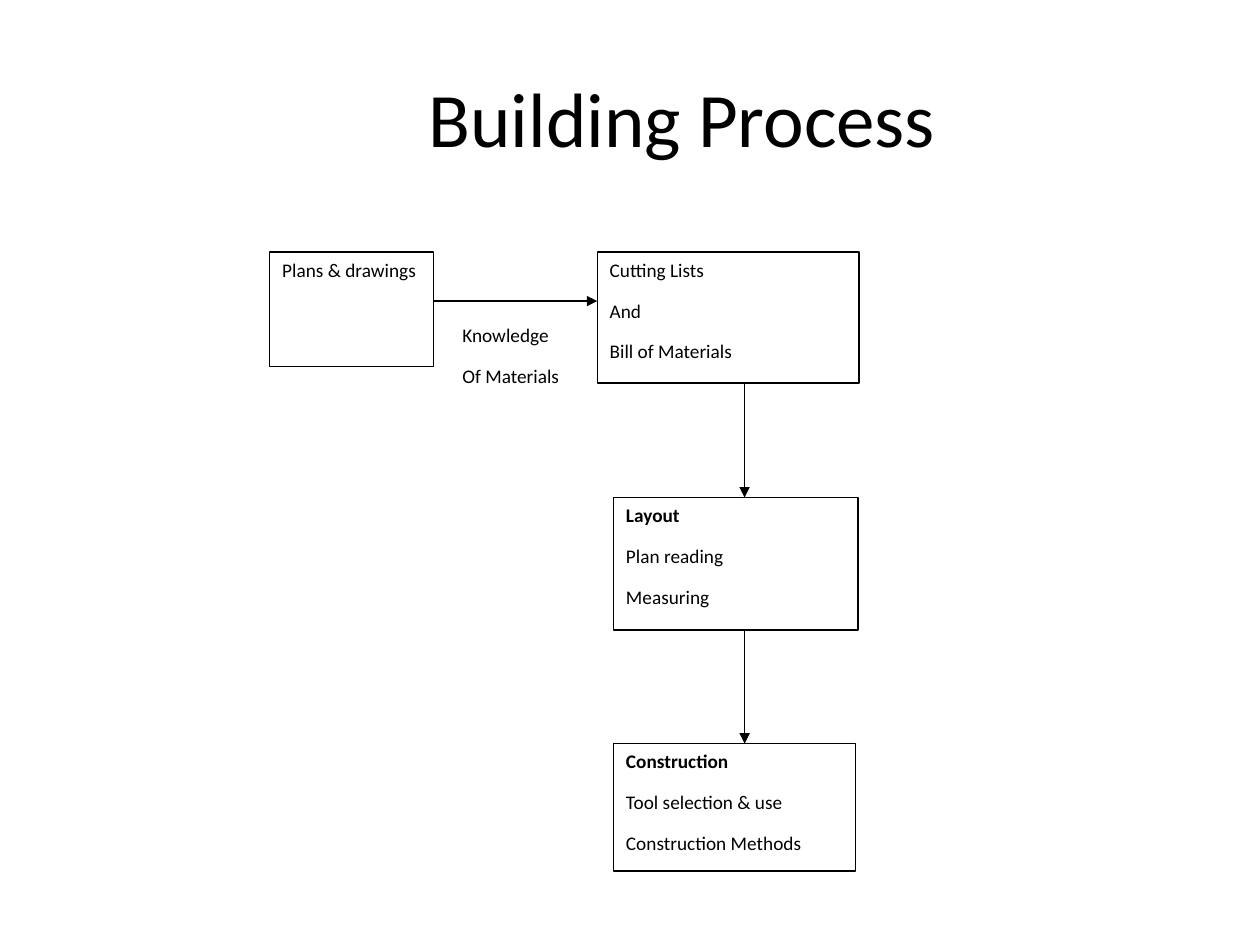
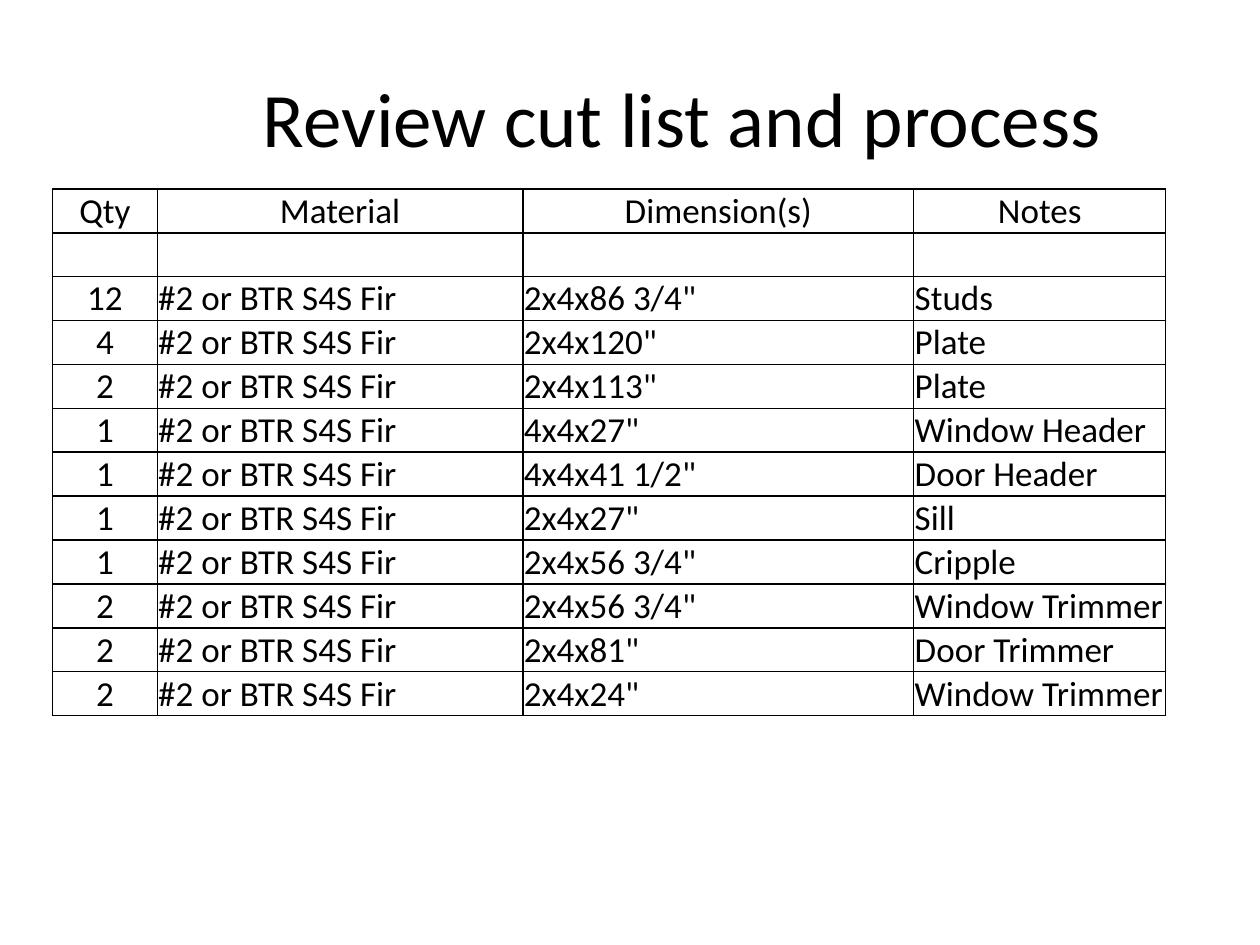
import pptx
import pptx.dml.color
import pptx.enum.shapes
import pptx.enum.text
import pptx.oxml
import pptx.oxml.ns
import pptx.util

Cm = pptx.util.Cm
Pt = pptx.util.Pt
ALIGN = pptx.enum.text.PP_ALIGN
ANCHOR = pptx.enum.text.MSO_ANCHOR

FONT = "Calibri"
INK = "000000"
PAPER = "FFFFFF"
LINE_WIDTH = Pt(0.75)
TITLE_BOX = (3.38, 0.76, 20.75, 3.18)
TITLE_ONLY_LAYOUT = 5

FLOW_BOX = (5.44, 5.08)
CUT_LIST_BOX = (1.06, 3.81)
COLUMN_WIDTHS = (2.11, 7.37, 7.88, 5.08)
ROW_HEIGHT = 0.88
CELL_MARGIN = 0.02
BORDER_SIDES = ("lnL", "lnR", "lnT", "lnB")

HEADINGS = ("Qty", "Material", "Dimension(s)", "Notes")
MATERIAL = "#2 or BTR S4S Fir"
PIECES = (
    ("12", '2x4x86 3/4"', "Studs"),
    ("4", '2x4x120"', "Plate"),
    ("2", '2x4x113"', "Plate"),
    ("1", '4x4x27"', "Window Header"),
    ("1", '4x4x41 1/2"', "Door Header"),
    ("1", '2x4x27"', "Sill"),
    ("1", '2x4x56 3/4"', "Cripple"),
    ("2", '2x4x56 3/4"', "Window Trimmer"),
    ("2", '2x4x81"', "Door Trimmer"),
    ("2", '2x4x24"', "Window Trimmer"),
)


def color(hex_text):
    """Turn a hex string into a colour."""
    return pptx.dml.color.RGBColor.from_string(hex_text)


def paint(fill, hex_text):
    """Make a fill solid in one colour."""
    fill.solid()
    fill.fore_color.rgb = color(hex_text)


def draw_line(line):
    """Give an outline or connector the shared stroke."""
    line.color.rgb = color(INK)
    line.width = LINE_WIDTH


def add_text(paragraph, text, size, bold=False):
    """Add one formatted run to a paragraph."""
    run = paragraph.add_run()
    run.text = text
    run.font.name = FONT
    run.font.size = Pt(size)
    run.font.bold = bold
    run.font.color.rgb = color(INK)


def add_titled_slide(presentation, title_text):
    """Add a slide with the shared title style."""
    layout = presentation.slide_layouts[TITLE_ONLY_LAYOUT]
    slide = presentation.slides.add_slide(layout)
    title = slide.shapes.title
    title.left, title.top, title.width, title.height = map(Cm, TITLE_BOX)
    title.text_frame.vertical_anchor = ANCHOR.MIDDLE
    paragraph = title.text_frame.paragraphs[0]
    paragraph.alignment = ALIGN.CENTER
    add_text(paragraph, title_text, 44)
    return slide


def add_step(slide, left, top, width, height, lines, heading=False, outlined=True):
    """Add a white box with one paragraph for each line."""
    shape = slide.shapes.add_shape(
        pptx.enum.shapes.MSO_SHAPE.RECTANGLE, Cm(left), Cm(top), Cm(width), Cm(height))
    shape.shadow.inherit = False
    paint(shape.fill, PAPER)
    if outlined:
        draw_line(shape.line)
    else:
        shape.line.fill.background()
    frame = shape.text_frame
    frame.word_wrap = True
    frame.vertical_anchor = ANCHOR.TOP
    for index, text in enumerate(lines):
        paragraph = frame.add_paragraph() if index else frame.paragraphs[0]
        paragraph.alignment = ALIGN.LEFT
        paragraph.space_after = Pt(10)
        add_text(paragraph, text, 11, bold=heading and index == 0)


def add_arrow(slide, start, end):
    """Add a straight arrow between two points."""
    connector = slide.shapes.add_connector(
        pptx.enum.shapes.MSO_CONNECTOR.STRAIGHT, *map(Cm, start + end))
    draw_line(connector.line)
    properties = connector.element.spPr
    outline = properties.find(pptx.oxml.ns.qn("a:ln"))
    outline.append(pptx.oxml.parse_xml(
        f'<a:tailEnd {pptx.oxml.ns.nsdecls("a")} type="triangle"/>'))
    properties.append(pptx.oxml.parse_xml(
        f'<a:effectLst {pptx.oxml.ns.nsdecls("a")}/>'))


def add_building_flow(slide, left, top):
    """Place the steps from plans to construction."""
    steps_left = left + 6.93
    arrow_x = left + 9.57
    layout_top = top + 4.95
    construction_top = top + 9.91
    add_step(slide, left, top, 3.3, 2.31, ["Plans & drawings"])
    add_step(slide, left + 6.6, top, 5.28, 2.64,
             ["Cutting Lists", "And", "Bill of Materials"])
    add_step(slide, left + 3.63, top + 1.32, 2.64, 1.65,
             ["Knowledge", "Of Materials"], outlined=False)
    add_step(slide, steps_left, layout_top, 4.93, 2.67,
             ["Layout", "Plan reading", "Measuring"], heading=True)
    add_step(slide, steps_left, construction_top, 4.88, 2.57,
             ["Construction", "Tool selection & use", "Construction Methods"], heading=True)
    add_arrow(slide, (left + 3.3, top + 0.99), (left + 6.6, top + 0.99))
    for step_top in (layout_top, construction_top):
        add_arrow(slide, (arrow_x, step_top - 2.31), (arrow_x, step_top))


def format_cell(cell):
    """Give a cell its fill, margins and borders."""
    paint(cell.fill, PAPER)
    cell.vertical_anchor = ANCHOR.MIDDLE
    cell.margin_left = cell.margin_right = cell.margin_top = Cm(CELL_MARGIN)
    cell.margin_bottom = Cm(0)
    properties = cell._tc.get_or_add_tcPr()
    for position, side in enumerate(BORDER_SIDES):
        properties.insert(position, pptx.oxml.parse_xml(
            f'<a:{side} {pptx.oxml.ns.nsdecls("a")} w="{Pt(1)}"><a:solidFill>'
            f'<a:srgbClr val="{INK}"/></a:solidFill></a:{side}>'))


def add_cut_list(slide, left, top):
    """Place the table of pieces to cut."""
    rows = [HEADINGS, ("",) * len(HEADINGS)]
    rows += [(quantity, MATERIAL, size, note) for quantity, size, note in PIECES]
    table = slide.shapes.add_table(
        len(rows), len(HEADINGS), Cm(left), Cm(top),
        Cm(sum(COLUMN_WIDTHS)), Cm(ROW_HEIGHT * len(rows))).table
    table.first_row = table.horz_banding = False
    for column, width in zip(table.columns, COLUMN_WIDTHS):
        column.width = Cm(width)
    for row_index, texts in enumerate(rows):
        table.rows[row_index].height = Cm(ROW_HEIGHT)
        for column_index, text in enumerate(texts):
            cell = table.cell(row_index, column_index)
            format_cell(cell)
            if text:
                paragraph = cell.text_frame.paragraphs[0]
                centered = row_index == 0 or column_index == 0
                paragraph.alignment = ALIGN.CENTER if centered else ALIGN.LEFT
                add_text(paragraph, text, 20)


def main():
    """Build and save the presentation."""
    presentation = pptx.Presentation()
    presentation.slide_width = Cm(25.4)
    presentation.slide_height = Cm(19.05)
    add_building_flow(add_titled_slide(presentation, "Building Process"), *FLOW_BOX)
    add_cut_list(add_titled_slide(presentation, "Review cut list and process"), *CUT_LIST_BOX)
    presentation.save("out.pptx")


if __name__ == "__main__":
    main()
